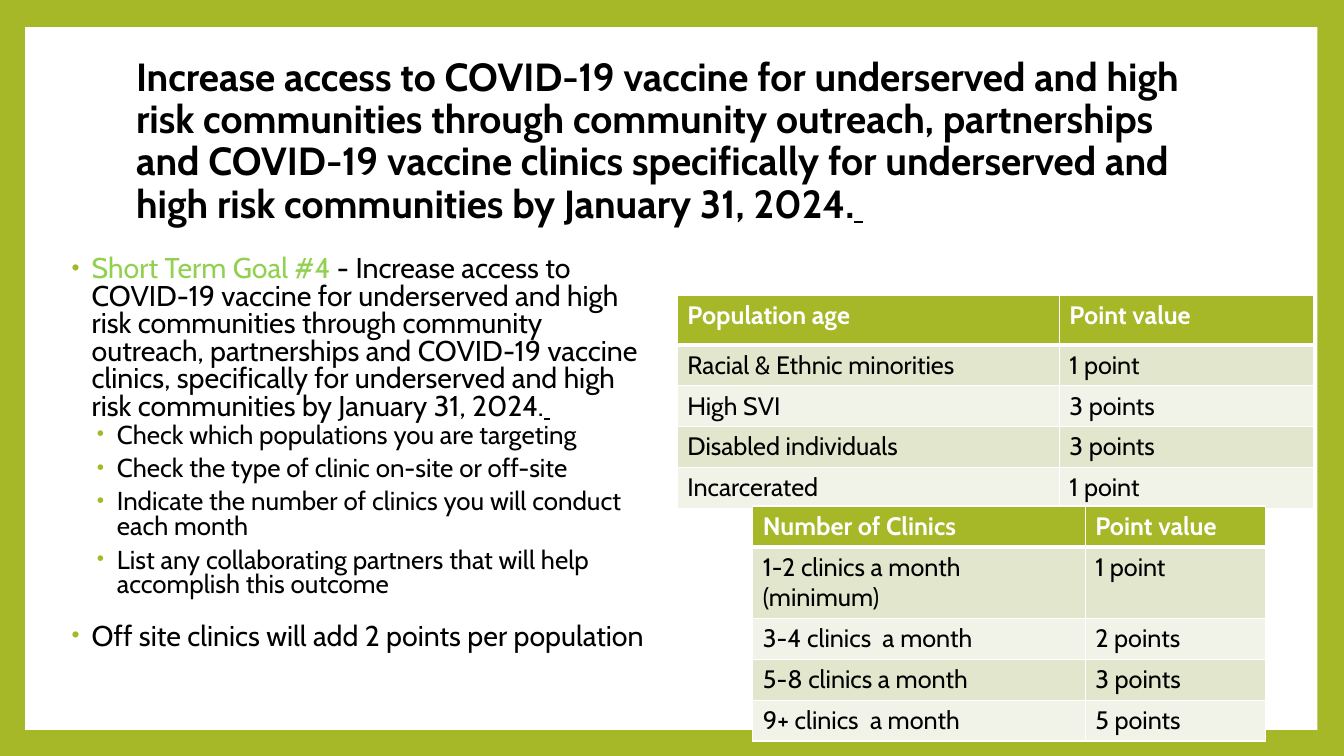
"""Build the slide on COVID-19 vaccine access with its goal list and two point tables."""
from lxml.etree import SubElement
from pptx import Presentation
from pptx.dml.color import RGBColor
from pptx.enum.shapes import MSO_SHAPE as SHAPE
from pptx.enum.text import MSO_ANCHOR as ANCHOR, MSO_AUTO_SIZE as AUTO, PP_ALIGN as ALIGN
from pptx.oxml import parse_xml
from pptx.oxml.ns import nsdecls, qn
from pptx.util import Pt

GREEN = RGBColor(0xA6, 0xB7, 0x27)
LIME = RGBColor(0x92, 0xD0, 0x50)
BAND_DARK = RGBColor(0xE1, 0xE6, 0xCD)
BAND_LIGHT = RGBColor(0xF1, 0xF3, 0xE8)
WHITE = RGBColor(0xFF, 0xFF, 0xFF)
BLACK = RGBColor(0, 0, 0)


def add_text(p, text, size=18, color=BLACK, bold=False, italic=False, underline=False):
    r = p.add_run()
    r.text = text
    f = r.font
    f.name, f.size, f.bold, f.italic, f.underline = "Cabin", Pt(size), bold, italic, underline
    f.color.rgb = color


def set_borders(cell, top, bottom):
    tcPr = cell._tc.get_or_add_tcPr()
    for i, (side, width) in enumerate([("L", 1), ("R", 1), ("T", top), ("B", bottom)]):
        tcPr.insert(i, parse_xml(
            f'<a:ln{side} {nsdecls("a")} w="{Pt(width)}"><a:solidFill>'
            f'<a:srgbClr val="{WHITE}"/></a:solidFill></a:ln{side}>'))


prs = Presentation()
prs.slide_width, prs.slide_height = Pt(960), Pt(540)
s = prs.slides.add_slide(prs.slide_layouts[1])
s.background.fill.solid()
s.background.fill.fore_color.rgb = GREEN

title, body = s.placeholders
panel = s.shapes.add_shape(SHAPE.RECTANGLE, Pt(18), Pt(19.4), Pt(923), Pt(502))
panel.shadow.inherit = False
panel.fill.solid()
panel.fill.fore_color.rgb = WHITE
panel.line.fill.background()
title.element.addprevious(panel.element)

for sp, box, anchor in [(title, (90, 48.2, 777.6, 106.6), ANCHOR.MIDDLE),
                        (body, (40.3, 180, 429.1, 318.2), ANCHOR.TOP)]:
    sp.left, sp.top, sp.width, sp.height = map(Pt, box)
    sp.text_frame.auto_size = AUTO.NONE
    sp.text_frame.word_wrap = True
    sp.text_frame.vertical_anchor = anchor

p = title.text_frame.paragraphs[0]
p.alignment = ALIGN.LEFT
p.line_spacing = 0.9
add_text(p, "Increase access to COVID-19 vaccine for underserved and high risk communities "
            "through community outreach, partnerships and COVID-19 vaccine clinics specifically "
            "for underserved and high risk communities by January 31, 2024.", size=28, bold=True)
add_text(p, " ", size=28, bold=True, italic=True, underline=True)

goals = [
    (0, [("Short Term Goal #4 ", {"color": LIME}),
         ("- Increase access to COVID-19 vaccine for underserved and high risk communities "
          "through community outreach, partnerships and COVID-19 vaccine clinics, specifically "
          "for underserved and high risk communities by January 31, 2024.", {}),
         (" ", {"italic": True, "underline": True})]),
    (1, [("Check which populations you are targeting", {})]),
    (1, [("Check the type of clinic on-site or off-site", {})]),
    (1, [("Indicate the number of clinics you will conduct each month", {})]),
    (1, [("List any collaborating partners that will help accomplish this outcome", {})]),
    (0, [("Off site clinics will add 2 points per population", {})]),
]
tf = body.text_frame
for i, (level, runs) in enumerate(goals):
    p = tf.add_paragraph() if i else tf.paragraphs[0]
    p.level = level
    p.line_spacing = 0.8
    p.space_before, p.space_after = (Pt(2), Pt(4)) if level else (Pt(14), Pt(0))
    pPr = p._p.get_or_add_pPr()
    pPr.set("marL", str(Pt(18 * (level + 1))))
    pPr.set("indent", str(Pt(-14.4)))
    SubElement(SubElement(pPr, qn("a:buClr")), qn("a:srgbClr"), val=str(GREEN))
    SubElement(pPr, qn("a:buSzPct"), val="80000")
    SubElement(pPr, qn("a:buFont"), typeface="Arial")
    SubElement(pPr, qn("a:buChar"), char="•")
    for text, style in runs:
        add_text(p, text, size=18.5 if level else 20.4, **style)

tables = [
    ((483.8, 211), (272.9, 181.4), (35.3, 23.8),
     [("Population age", "Point value"),
      ("Racial & Ethnic minorities", "1 point"),
      ("High SVI", "3 points"),
      ("Disabled individuals", "3 points"),
      ("Incarcerated", "1 point")]),
    ((537.8, 361.4), (237.4, 128.6), (27.4, 22.3),
     [("Number of Clinics", "Point value"),
      ("1-2 clinics a month (minimum)", "1 point"),
      ("3-4 clinics  a month", "2 points"),
      ("5-8 clinics a month", "3 points"),
      ("9+ clinics  a month", "5 points")]),
]
for (left, top), widths, (head_height, row_height), rows in tables:
    height = head_height + row_height * (len(rows) - 1)
    table = s.shapes.add_table(len(rows), len(widths), Pt(left), Pt(top),
                               Pt(sum(widths)), Pt(height)).table
    for column, width in zip(table.columns, widths):
        column.width = Pt(width)
    for i, row in enumerate(rows):
        head = i == 0
        table.rows[i].height = Pt(head_height if head else row_height)
        for j, text in enumerate(row):
            cell = table.cell(i, j)
            cell.fill.solid()
            cell.fill.fore_color.rgb = GREEN if head else BAND_DARK if i % 2 else BAND_LIGHT
            set_borders(cell, top=3 if i == 1 else 1, bottom=3 if head else 1)
            add_text(cell.text_frame.paragraphs[0], text,
                     color=WHITE if head else BLACK, bold=head)

prs.save("out.pptx")
